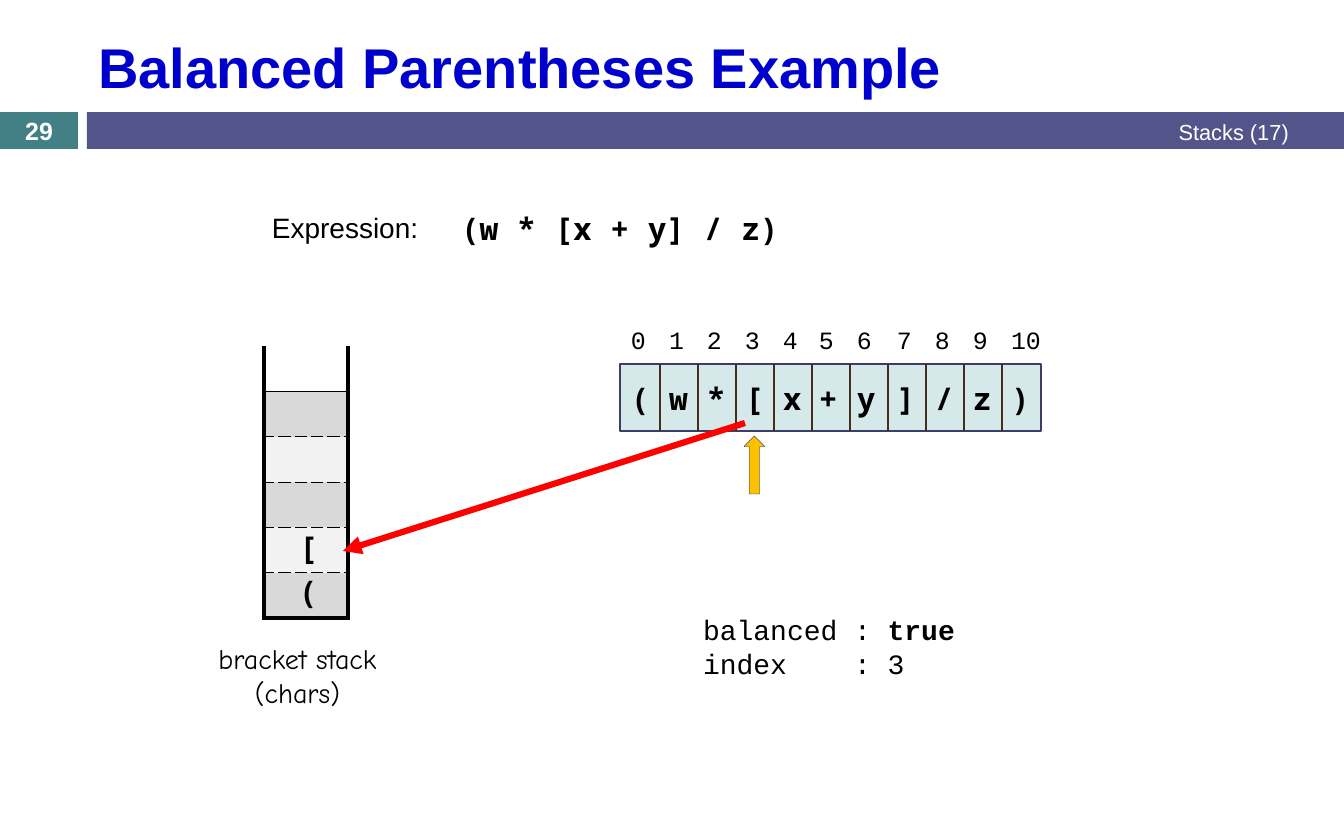
from lxml.etree import SubElement
from pptx import Presentation
from pptx.dml.color import RGBColor
from pptx.enum.shapes import MSO_CONNECTOR, MSO_SHAPE
from pptx.enum.text import MSO_ANCHOR, PP_ALIGN
from pptx.oxml.ns import qn
from pptx.util import Emu, Pt

PX = 914400 / 112
BLACK = RGBColor(0x00, 0x00, 0x00)
WHITE = RGBColor(0xFF, 0xFF, 0xFF)
BLUE = RGBColor(0x00, 0x00, 0xCC)
TEAL = RGBColor(0x43, 0x80, 0x86)
INDIGO = RGBColor(0x53, 0x54, 0x8A)
PALE_TEAL = RGBColor(0xD6, 0xE9, 0xEA)
ARRAY_EDGE = RGBColor(0x3D, 0x3E, 0x66)
BROWN = RGBColor(0x46, 0x2E, 0x1F)
RED = RGBColor(0xFF, 0x00, 0x00)
AMBER = RGBColor(0xFF, 0xC0, 0x00)
NAVY = RGBColor(0x00, 0x20, 0x60)
GREY = RGBColor(0xD9, 0xD9, 0xD9)
LIGHT_GREY = RGBColor(0xF2, 0xF2, 0xF2)
MONO = "Noto Sans Mono"
CODE = "Courier New"


def box(*lengths):
    return [Emu(round(length * PX)) for length in lengths]


def write(shape, lines, font, size, color=BLACK, align=PP_ALIGN.LEFT, anchor=MSO_ANCHOR.TOP):
    frame = shape.text_frame
    frame.word_wrap = True
    frame.vertical_anchor = anchor
    for number, runs in enumerate(lines):
        paragraph = frame.add_paragraph() if number else frame.paragraphs[0]
        paragraph.alignment = align
        for text, bold in runs:
            run = paragraph.add_run()
            run.text = text
            run.font.name = font
            run.font.size = Pt(size)
            run.font.bold = bold
            run.font.color.rgb = color


presentation = Presentation()
presentation.slide_width, presentation.slide_height = box(1344, 840)
slide = presentation.slides.add_slide(presentation.slide_layouts[5])
shapes = slide.shapes

title = shapes.title
title.left, title.top, title.width, title.height = box(87, 21, 1198, 90)
write(title, [[("Balanced Parentheses Example", True)]], "Arial", 36, BLUE, anchor=MSO_ANCHOR.MIDDLE)

for kind, bounds, fill, edge, weight in (
    (MSO_SHAPE.RECTANGLE, (0, 112, 78, 37), TEAL, None, 0),
    (MSO_SHAPE.RECTANGLE, (87, 112, 1257, 37), INDIGO, None, 0),
    (MSO_SHAPE.RECTANGLE, (620, 364, 421, 67), PALE_TEAL, ARRAY_EDGE, 1.5),
    (MSO_SHAPE.UP_ARROW, (744, 436, 21, 58), AMBER, NAVY, 0.25),
):
    shape = shapes.add_shape(kind, *box(*bounds))
    shape.shadow.inherit = False
    shape.fill.solid()
    shape.fill.fore_color.rgb = fill
    if edge is None:
        shape.line.fill.background()
    else:
        shape.line.color.rgb = edge
        shape.line.width = Pt(weight)

page_number = shapes.add_textbox(*box(0, 112, 78, 37))
write(page_number, [[("29", True)]], "Arial", 16, WHITE, PP_ALIGN.CENTER, MSO_ANCHOR.MIDDLE)
section = shapes.add_textbox(*box(504, 113, 796, 37))
write(section, [[("Stacks (17)", False)]], "Arial", 14, WHITE, PP_ALIGN.RIGHT, MSO_ANCHOR.MIDDLE)

expression_label = shapes.add_textbox(*box(261, 205, 224, 45))
write(expression_label, [[("Expression:", False)]], "Arial", 18)
expression = shapes.add_textbox(*box(450, 204, 399, 49))
write(expression, [[("(w * [x + y] / z)", True)]], MONO, 20)

stack_frame = shapes.add_table(6, 1, *box(264, 346, 84, 272))
stack = stack_frame.table
stack.first_row = False
stack.horz_banding = False
solid, dashed = (0.5, "solid"), (0.5, "lgDash")
wall = (3, "solid")
edges = [None, solid, dashed, dashed, dashed, dashed, wall]
for row, fill in enumerate((WHITE, GREY, LIGHT_GREY, GREY, LIGHT_GREY, GREY)):
    cell = stack.cell(row, 0)
    cell.margin_top = cell.margin_bottom = 0
    properties = cell._tc.get_or_add_tcPr()
    for side, edge in (("L", wall), ("R", wall), ("T", edges[row]), ("B", edges[row + 1])):
        border = SubElement(properties, qn("a:ln" + side))
        if edge is None:
            SubElement(border, qn("a:noFill"))
            continue
        border.set("w", str(Pt(edge[0])))
        color = SubElement(SubElement(border, qn("a:solidFill")), qn("a:srgbClr"))
        color.set("val", str(BLACK))
        SubElement(border, qn("a:prstDash")).set("val", edge[1])
    cell.fill.solid()
    cell.fill.fore_color.rgb = fill

lines = [(660 + 38 * step, 364, 660 + 38 * step, 431, BROWN, 1.5) for step in range(10)]
lines.append((745, 423, 343, 551, RED, 4))
for *ends, color, weight in lines:
    connector = shapes.add_connector(MSO_CONNECTOR.STRAIGHT, *box(*ends))
    connector.line.color.rgb = color
    connector.line.width = Pt(weight)
    SubElement(connector._element.spPr, qn("a:effectLst"))
push_arrow = connector
SubElement(push_arrow.line._get_or_add_ln(), qn("a:tailEnd")).set("type", "triangle")

for index, symbol in enumerate("(w*[x+y]/z)"):
    left = 620 + 38 * index - (2 if index in (5, 6) else 0)
    width = 57 if index == 10 else 38
    index_label = shapes.add_textbox(*box(left, 319, width, 41))
    write(index_label, [[(str(index), False)]], CODE, 16)
    symbol_label = shapes.add_textbox(*box(left, 374, width, 49))
    write(symbol_label, [[(symbol, True)]], MONO, 20)

for bracket, top in (("[", 523), ("(", 567)):
    stacked = shapes.add_textbox(*box(288, top, 38, 49))
    write(stacked, [[(bracket, True)]], MONO, 20)

stack_caption = shapes.add_textbox(*box(194, 636, 207, 80))
write(stack_caption, [[("bracket stack", False)], [("(chars)", False)]], "Comic Neue", 18, align=PP_ALIGN.CENTER)

state = shapes.add_textbox(*box(692, 607, 364, 80))
write(state, [[("balanced\t: ", False), ("true", True)], [("index\t: 3", False)]], CODE, 18)
for paragraph in state.text_frame.paragraphs:
    tabs = SubElement(paragraph._p.get_or_add_pPr(), qn("a:tabLst"))
    tab = SubElement(tabs, qn("a:tab"))
    tab.set("pos", str(box(151)[0]))
    tab.set("algn", "l")

presentation.save("out.pptx")
